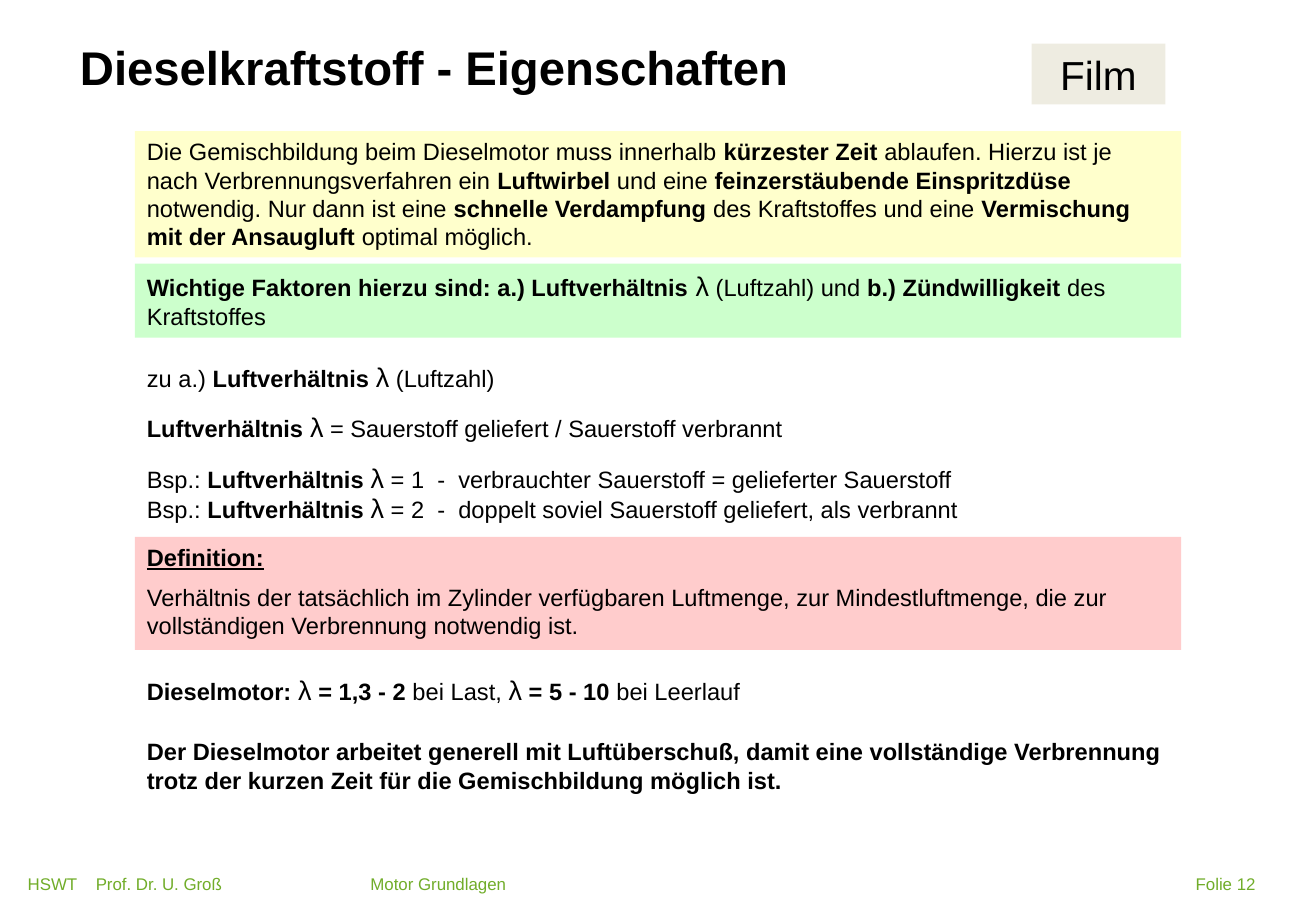
"""Build the slide on the properties of diesel fuel."""
import pptx
import pptx.dml.color
import pptx.enum.shapes
import pptx.enum.text
import pptx.util

BLACK = pptx.dml.color.RGBColor(0x00, 0x00, 0x00)
GREEN = pptx.dml.color.RGBColor(0x71, 0xAD, 0x2A)
PALE_YELLOW = pptx.dml.color.RGBColor(0xFF, 0xFF, 0xCC)
PALE_GREEN = pptx.dml.color.RGBColor(0xCC, 0xFF, 0xCC)
PALE_RED = pptx.dml.color.RGBColor(0xFF, 0xCC, 0xCC)
BEIGE = pptx.dml.color.RGBColor(0xEE, 0xEC, 0xE1)
WHITE = pptx.dml.color.RGBColor(0xFF, 0xFF, 0xFF)

LEFT = pptx.enum.text.PP_ALIGN.LEFT
CENTER = pptx.enum.text.PP_ALIGN.CENTER
RIGHT = pptx.enum.text.PP_ALIGN.RIGHT
TOP = pptx.enum.text.MSO_ANCHOR.TOP
MIDDLE = pptx.enum.text.MSO_ANCHOR.MIDDLE

CONTENT_LEFT, CONTENT_WIDTH = 1.11, 8.61
FOOTER_TOP, FOOTER_HEIGHT = 7.14, 0.24

presentation = pptx.Presentation()
presentation.slide_width = pptx.util.Inches(10.83)
presentation.slide_height = pptx.util.Inches(7.5)
slide = presentation.slides.add_slide(presentation.slide_layouts[6])


def add_run(paragraph, text, size, bold, color):
    """Append one formatted run."""
    run = paragraph.add_run()
    run.text = text
    run.font.name = "Arial"
    run.font.size = pptx.util.Pt(size)
    run.font.bold = bold
    run.font.color.rgb = color
    return run


def add_box(place, paragraphs, size=14, fill=None, color=BLACK, align=LEFT, anchor=TOP):
    """Add a box whose text marks bold parts with asterisks; lambda is larger."""
    position = [pptx.util.Inches(length) for length in place]
    if fill is None:
        shape = slide.shapes.add_textbox(*position)
    else:
        shape = slide.shapes.add_shape(pptx.enum.shapes.MSO_SHAPE.RECTANGLE, *position)
        shape.shadow.inherit = False
        shape.fill.solid()
        shape.fill.fore_color.rgb = fill
        shape.line.fill.background()
    text_frame = shape.text_frame
    text_frame.word_wrap = True
    text_frame.vertical_anchor = anchor
    for index, text in enumerate(paragraphs):
        paragraph = text_frame.add_paragraph() if index else text_frame.paragraphs[0]
        paragraph.alignment = align
        if index:
            paragraph.space_before = pptx.util.Pt(size / 2)
        for part, words in enumerate(text.split("*")):
            for piece, plain in enumerate(words.split("λ")):
                if piece:
                    add_run(paragraph, "λ", size + 2, False, color)
                if plain:
                    add_run(paragraph, plain, size, part % 2 == 1, color)
    return shape


add_box((0.56, 0.21, 9.53, 0.67), ["*Dieselkraftstoff - Eigenschaften*"], 28, anchor=MIDDLE)
add_box((8.49, 0.36, 1.1, 0.5), ["Film"], 24, BEIGE, align=CENTER)

content = [
    (1.08, 1.04, PALE_YELLOW, [
        "Die Gemischbildung beim Dieselmotor muss innerhalb *kürzester Zeit* ablaufen. "
        "Hierzu ist je nach Verbrennungsverfahren ein *Luftwirbel* und eine "
        "*feinzerstäubende Einspritzdüse* notwendig. Nur dann ist eine "
        "*schnelle Verdampfung* des Kraftstoffes und eine "
        "*Vermischung mit der Ansaugluft* optimal möglich."]),
    (2.17, 0.61, PALE_GREEN, [
        "*Wichtige Faktoren hierzu sind: a.) Luftverhältnis λ* (Luftzahl) und "
        "*b.) Zündwilligkeit* des Kraftstoffes"]),
    (2.92, 0.37, None, ["zu a.) *Luftverhältnis λ* (Luftzahl)"]),
    (3.33, 0.37, None, ["*Luftverhältnis λ* = Sauerstoff geliefert / Sauerstoff verbrannt"]),
    (3.75, 0.37, None, [
        "Bsp.: *Luftverhältnis λ* = 1  -  verbrauchter Sauerstoff = gelieferter Sauerstoff"]),
    (4.0, 0.37, None, [
        "Bsp.: *Luftverhältnis λ* = 2  -  doppelt soviel Sauerstoff geliefert, als verbrannt"]),
    (4.42, 0.93, PALE_RED, [
        "*Definition:*",
        "Verhältnis der tatsächlich im Zylinder verfügbaren Luftmenge, zur "
        "Mindestluftmenge, die zur vollständigen Verbrennung notwendig ist."]),
    (5.5, 0.37, None, ["*Dieselmotor: λ = 1,3 - 2* bei Last, *λ = 5 - 10* bei Leerlauf"]),
    (6.02, 0.57, WHITE, [
        "*Der Dieselmotor arbeitet generell mit Luftüberschuß, damit eine vollständige "
        "Verbrennung trotz der kurzen Zeit für die Gemischbildung möglich ist.*"]),
]
for top, height, fill, paragraphs in content:
    box = add_box((CONTENT_LEFT, top, CONTENT_WIDTH, height), paragraphs, fill=fill)
    if fill == PALE_RED:
        box.text_frame.paragraphs[0].runs[0].font.underline = True

footers = [
    (0.13, 0.65, "HSWT", LEFT),
    (0.69, 2.0, "Prof. Dr. U. Groß", LEFT),
    (2.95, 2.0, "Motor Grundlagen", LEFT),
    (9.0, 1.43, "Folie 12", RIGHT),
]
for left, width, text, align in footers:
    add_box((left, FOOTER_TOP, width, FOOTER_HEIGHT), [text], 10, color=GREEN, align=align)

presentation.save("out.pptx")
